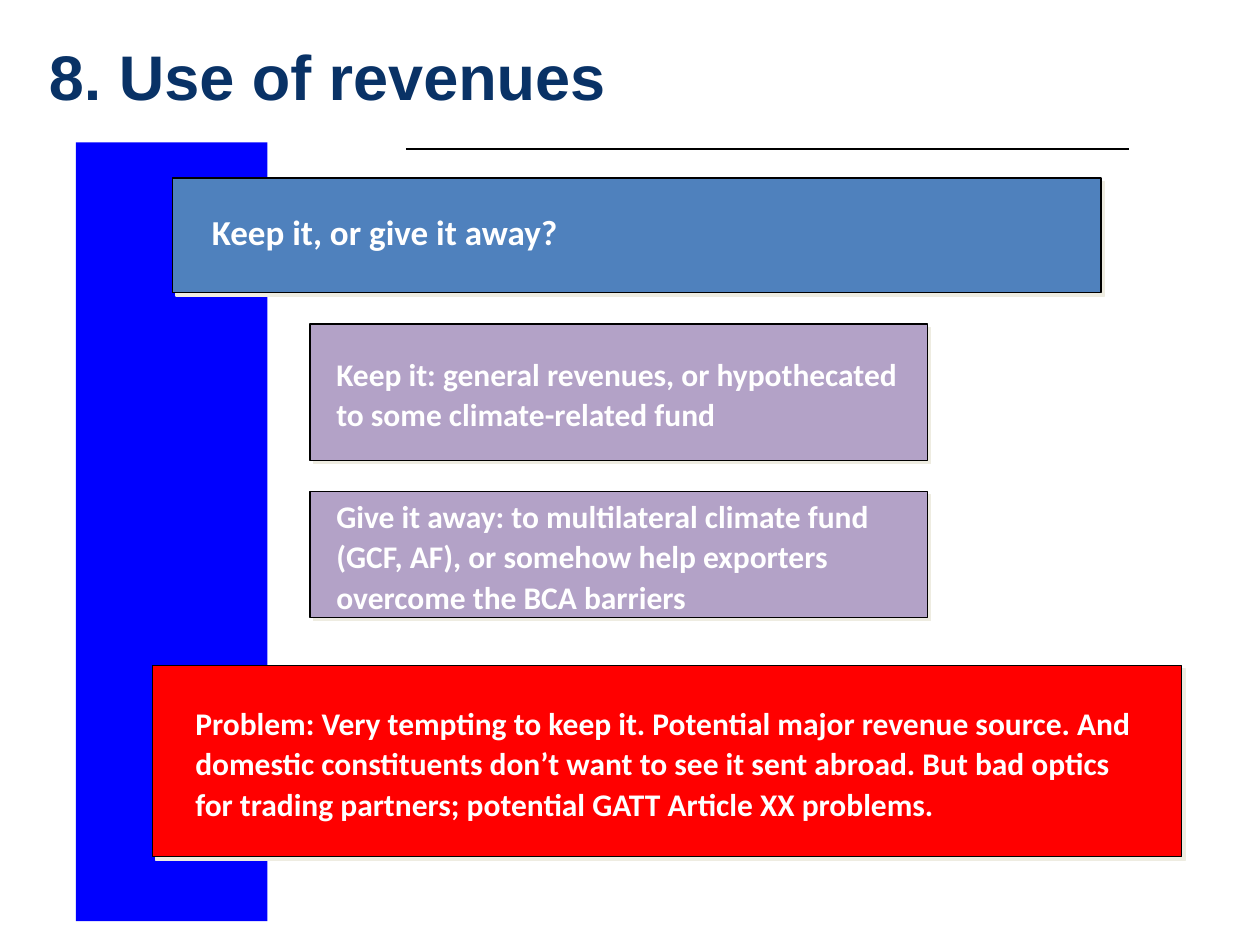
from lxml import etree
from pptx import Presentation
from pptx.dml.color import RGBColor
from pptx.enum import shapes, text
from pptx.oxml import ns
from pptx.util import Pt

COLORS = {"title": "093266", "band": "0000FF", "line": "000000", "shadow": "EEECE1",
          "question": "4F81BD", "option": "B3A2C7", "problem": "FF0000", "text": "FFFFFF"}


def rgb(name):
    return RGBColor.from_string(COLORS[name])


def add_text(parent, box, wording, font, size, color):
    tf = parent.add_textbox(*map(Pt, box)).text_frame
    tf.word_wrap = True
    tf.vertical_anchor = text.MSO_ANCHOR.MIDDLE
    tf.text = wording
    p = tf.paragraphs[0]
    f = p.runs[0].font
    f.name, f.size, f.bold = font, Pt(size), True
    f.color.rgb = rgb(color)
    return tf


prs = Presentation()
prs.slide_width, prs.slide_height = Pt(720), Pt(540)
s = prs.slides.add_slide(prs.slide_layouts[6])

add_text(s.shapes, (20.9, 31.7, 679, 23), "8. Use of revenues", "Arial", 36, "title")

band = s.shapes.add_shape(shapes.MSO_SHAPE.RECTANGLE, Pt(43.4), Pt(81.4), Pt(109.4), Pt(445))
band.shadow.inherit = False
band.fill.solid()
band.fill.fore_color.rgb = rgb("band")
band.line.fill.background()

rule = s.shapes.add_connector(shapes.MSO_CONNECTOR.STRAIGHT, Pt(232), Pt(85.2), Pt(645), Pt(85.2))
rule.line.color.rgb = rgb("line")
rule.line.width = Pt(0.75)
etree.SubElement(rule._element.spPr, ns.qn("a:effectLst"))

cards = [
    ((98.6, 101.8, 530.6, 65.4), (121, 101.5, 486, 59.8), "question", 20,
     "Keep it, or give it away?"),
    ((177.1, 185.2, 352.8, 77.8), (192.2, 188.6, 323.3, 71.3), "option", 18,
     "Keep it: general revenues, or hypothecated to some climate-related fund"),
    ((177.1, 280.8, 352.8, 72), (192.2, 284.4, 323.3, 65.5), "option", 18,
     "Give it away: to multilateral climate fund (GCF, AF), or somehow help exporters "
     "overcome the BCA barriers"),
    ((87.1, 380.2, 588.2, 109.4), (111.6, 385.2, 539.3, 100.1), "problem", 18,
     "Problem: Very tempting to keep it. Potential major revenue source. And domestic "
     "constituents don’t want to see it sent abroad. But bad optics for trading partners; "
     "potential GATT Article XX problems."),
]
for box, text_box, color, size, wording in cards:
    group = s.shapes.add_group_shape()
    sp = group.shapes.add_shape(shapes.MSO_SHAPE.RECTANGLE, *map(Pt, box))
    sp.fill.solid()
    sp.fill.fore_color.rgb = rgb(color)
    sp.line.color.rgb = rgb("line")
    sp.line.width = Pt(0.75)
    sp.shadow.inherit = False
    effects = sp._element.spPr.find(ns.qn("a:effectLst"))
    shadow = etree.SubElement(effects, ns.qn("a:outerShdw"), dist=str(Pt(2.8)),
                              dir="2700000", algn="ctr", rotWithShape="0")
    etree.SubElement(shadow, ns.qn("a:srgbClr"), val=COLORS["shadow"])

    tf = add_text(group.shapes, text_box, wording, "Calibri", size, "text")
    tf.margin_left = tf.margin_right = tf.margin_top = tf.margin_bottom = 0
    p = tf.paragraphs[0]
    p.line_spacing = 1.07
    p.space_after = Pt(8)

prs.save("out.pptx")
